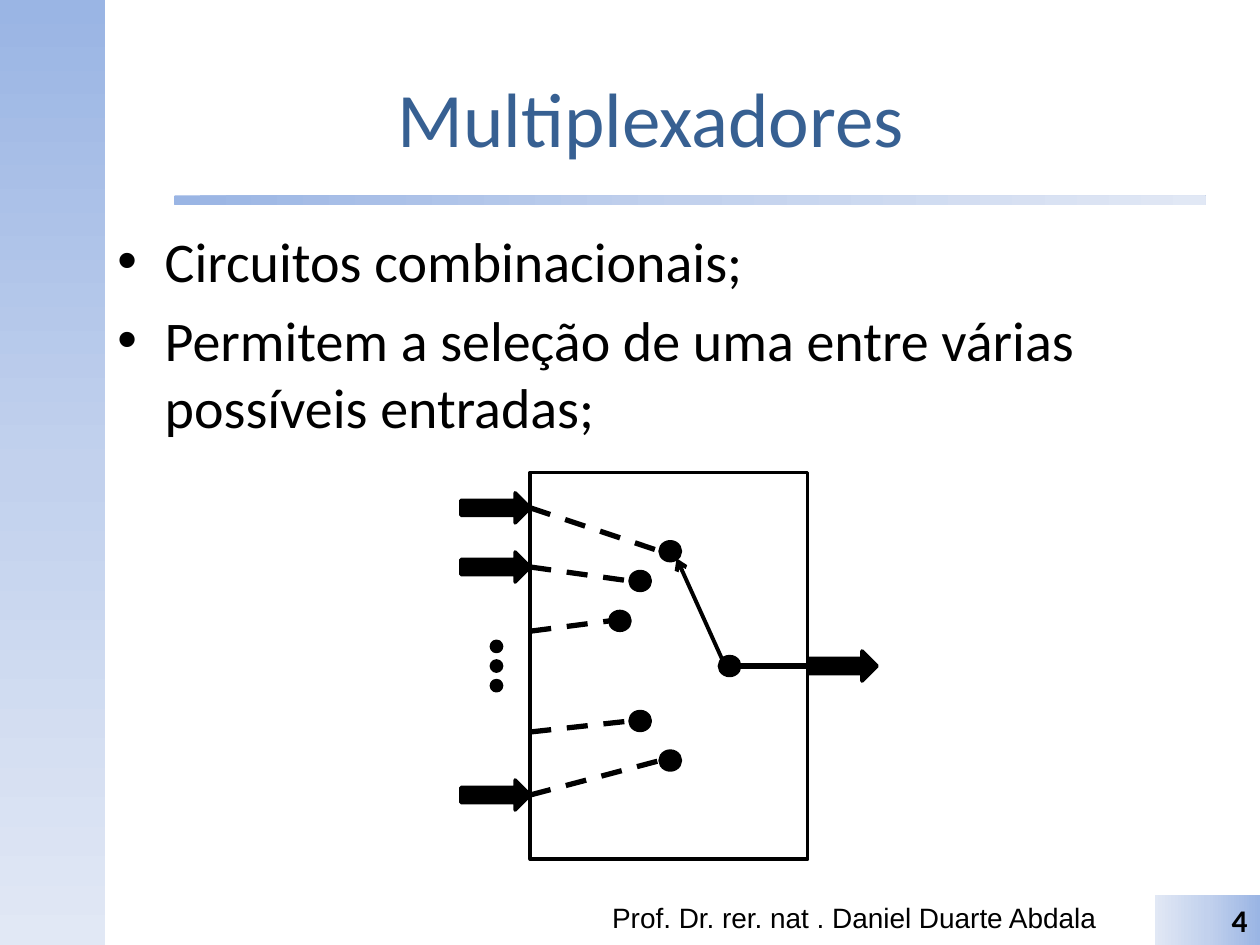
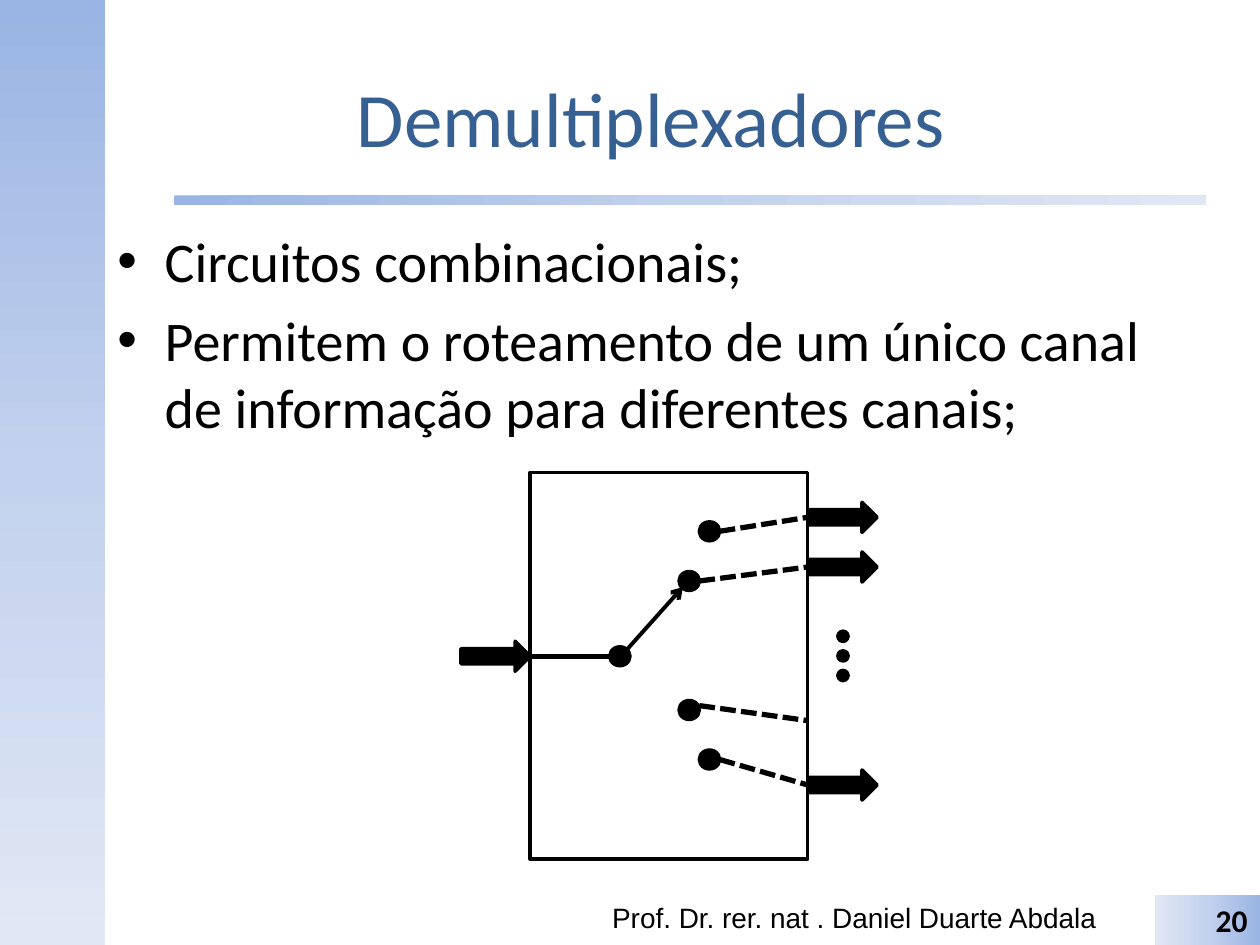
from copy import deepcopy

from lxml.etree import SubElement
from pptx import Presentation
from pptx.dml.color import RGBColor as Rgb
from pptx.enum.dml import MSO_LINE_DASH_STYLE as Dash
from pptx.enum.shapes import MSO_CONNECTOR as Link, MSO_SHAPE as Kind
from pptx.enum.text import MSO_ANCHOR as Anchor, PP_ALIGN as Align
from pptx.oxml.ns import qn
from pptx.util import Pt

COLORS = {"ink": "000000", "title": "376092"}
FADE = [(0, "9AB5E4"), (50, "C2D1ED"), (100, "E1E8F5")]
AUTHOR = "Prof. Dr. rer. nat . Daniel Duarte Abdala"

LEFT, TOP, WIDE, HIGH = 303, 270, 158.6, 221  # the circuit's box
RIGHT = LEFT + WIDE
PIN = 39.6, 17.2   # block arrow
NODE = 11.6, 10.8  # switch contact
DOT = 5.8, 5.8     # ellipsis dot


def color(name):
    return Rgb.from_string(COLORS[name])


def write(frame, lines, size=18, font="Calibri", ink="ink", bold=False,
          align=Align.LEFT, anchor=Anchor.TOP, before=0, bullet=None):
    """Fill a text frame, one paragraph per line."""
    frame.word_wrap = True
    frame.vertical_anchor = anchor
    for i, line in enumerate(lines):
        para = frame.add_paragraph() if i else frame.paragraphs[0]
        para.alignment = align
        para.space_before = Pt(before)
        run = para.add_run()
        run.text = line
        run.font.size, run.font.name, run.font.bold = Pt(size), font, bold
        run.font.color.rgb = color(ink)
        if bullet:
            props = para._p.get_or_add_pPr()
            props.set("marL", str(Pt(27)))
            props.set("indent", str(Pt(-27)))
            SubElement(props, qn("a:buFont")).set("typeface", "Arial")
            SubElement(props, qn("a:buChar")).set("char", bullet)


class Deck:
    def __init__(self):
        self.prs = Presentation()
        self.prs.slide_width, self.prs.slide_height = Pt(720), Pt(540)
        self.slide = None

    def page(self, title, points, number):
        """Start a slide with its bands, title, bullets and footer."""
        self.slide = self.prs.slides.add_slide(self.prs.slide_layouts[5])
        self.band(Kind.RECTANGLE, 0, 0, 60, 540, 90)
        self.band(Kind.ROUNDED_RECTANGLE, 99.4, 111.6, 589.6, 5.8, 0)
        head = self.slide.shapes.title
        head.left, head.top, head.width, head.height = map(Pt, (60, 21.6, 624, 90))
        write(head.text_frame, [title], size=44, ink="title",
              align=Align.CENTER, anchor=Anchor.MIDDLE)
        self.text(60, 126, 624, 132, points, size=32, before=6.4, bullet="•")
        self.text(342.7, 511.2, 301.7, 28.8, [AUTHOR], size=16, font="Arial")
        badge = self.band(Kind.RECTANGLE, 660, 511.2, 60, 28.8, 180)
        write(badge.text_frame, [str(number)], bold=True, align=Align.RIGHT)

    def text(self, x, y, w, h, lines, **fmt):
        box = self.slide.shapes.add_textbox(Pt(x), Pt(y), Pt(w), Pt(h))
        write(box.text_frame, lines, **fmt)

    def shape(self, kind, x, y, w, h):
        item = self.slide.shapes.add_shape(kind, Pt(x), Pt(y), Pt(w), Pt(h))
        item.shadow.inherit = False
        return item

    def band(self, kind, x, y, w, h, angle):
        """Add a blue gradient shape; the angle runs clockwise."""
        item = self.shape(kind, x, y, w, h)
        item.line.fill.background()
        item.fill.gradient()
        item.fill.gradient_angle = -angle % 360
        first = item.fill.gradient_stops[0]._gs
        first.addnext(deepcopy(first))
        for stop, (place, tint) in zip(item.fill.gradient_stops, FADE):
            stop.color.rgb = Rgb.from_string(tint)
            stop.position = place / 100
        return item

    def block(self, kind, x, y, size, solid=True):
        """Add a black-lined shape by its left edge and middle height."""
        w, h = size
        item = self.shape(kind, x, y - h / 2, w, h)
        item.line.color.rgb = color("ink")
        item.line.width = Pt(2)
        if solid:
            item.fill.solid()
            item.fill.fore_color.rgb = color("ink")
        else:
            item.fill.background()

    def frame(self):
        self.block(Kind.RECTANGLE, LEFT, TOP + HIGH / 2, (WIDE, HIGH), solid=False)

    def pin(self, x, y):
        self.block(Kind.RIGHT_ARROW, x, y, PIN)

    def node(self, x, y, size=NODE):
        self.block(Kind.OVAL, x - size[0] / 2, y, size)

    def dots(self, x, y):
        for i in range(3):
            self.node(x, y + 11.2 * i, DOT)

    def line(self, x1, y1, x2, y2, width=3, dash=None, tip=False):
        wire = self.slide.shapes.add_connector(
            Link.STRAIGHT, Pt(x1), Pt(y1), Pt(x2), Pt(y2))
        wire.line.color.rgb = color("ink")
        wire.line.width = Pt(width)
        if dash:
            wire.line.dash_style = dash
        if tip:
            SubElement(wire.line._get_or_add_ln(), qn("a:tailEnd")).set("type", "arrow")
        SubElement(wire._element.spPr, qn("a:effectLst"))


def draw_mux(deck):
    deck.page("Multiplexadores",
              ["Circuitos combinacionais;",
               "Permitem a seleção de uma entre várias possíveis entradas;"], 4)
    deck.frame()
    for y in (290.2, 324, 454.3):
        deck.pin(LEFT - PIN[0], y)
    deck.dots(283.7, 369.4)
    # edge height, contact x, contact y
    for edge, x, y in ((290.2, 383, 315), (324, 365.8, 332), (360.7, 354.2, 354.8),
                       (418.3, 365.8, 412), (454.3, 383, 434.6)):
        deck.line(LEFT, edge, x - NODE[0] / 2, y, dash=Dash.DASH)
        deck.node(x, y)
    x, y = 416.9, 380.6
    deck.node(x, y)
    deck.line(x + NODE[0] / 2, y, RIGHT, y)
    deck.line(412.6, 376.6, 386.6, 319, width=2.25, tip=True)
    deck.pin(RIGHT, y)


def draw_demux(deck):
    deck.page("Demultiplexadores",
              ["Circuitos combinacionais;",
               "Permitem o roteamento de um único canal de informação "
               "para diferentes canais;"], 20)
    deck.frame()
    for y in (295.6, 324, 448.6):
        deck.pin(RIGHT, y)
    deck.dots(481.7, 363.6)
    # contact x, contact y, wire start height, edge height
    for x, y, start, edge in ((405.4, 303.6, 303.6, 295.6), (393.8, 332, 332, 324),
                              (393.8, 405.7, 403.2, 411.8),
                              (405.4, 434, 434, 448.6)):
        deck.node(x, y)
        deck.line(x + NODE[0] / 2, start, RIGHT, edge, dash=Dash.SQUARE_DOT)
    x, y = 354.2, 375
    deck.pin(LEFT - PIN[0], y)
    deck.line(LEFT, y, x - NODE[0] / 2, y)
    deck.node(x, y)
    deck.line(358.6, 370.8, 390.2, 335.5, width=2.25, tip=True)


def main():
    deck = Deck()
    draw_mux(deck)
    draw_demux(deck)
    deck.prs.save("out.pptx")


if __name__ == "__main__":
    main()
